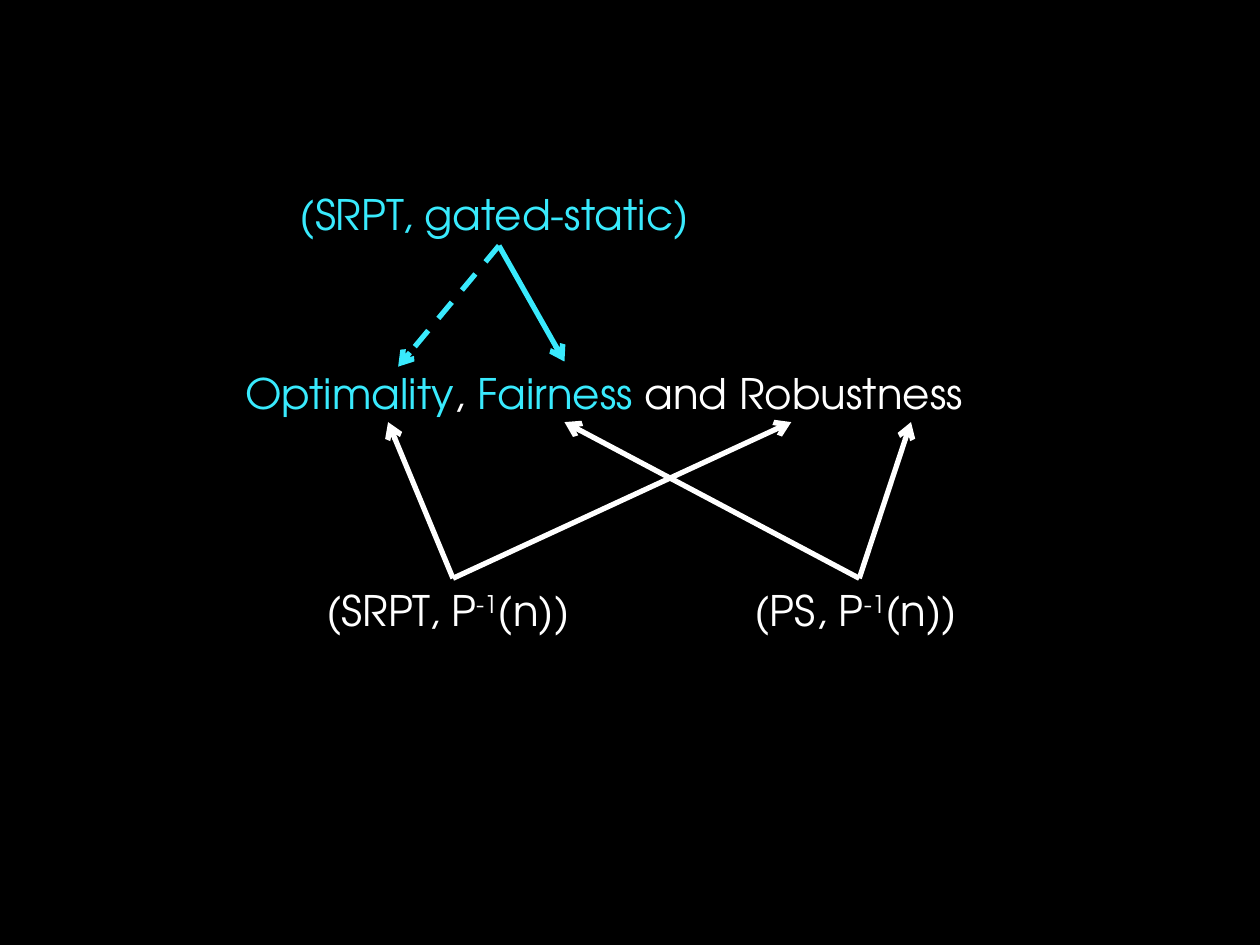
from lxml import etree
from pptx import Presentation
from pptx.dml.color import RGBColor
from pptx.enum import dml, shapes, text
from pptx.oxml.ns import qn
from pptx.util import Inches, Pt

BLACK = RGBColor(0x00, 0x00, 0x00)
WHITE = RGBColor(0xFF, 0xFF, 0xFF)
CYAN = RGBColor(0x39, 0xEA, 0xFD)
FONT = "TeX Gyre Adventor"
TOP, BOTTOM = 0, 2  # connection sites of a rectangle

# Content: runs are (text, colour, superscript)
GOALS = [("Optimality", CYAN, False), (", ", WHITE, False),
         ("Fairness", CYAN, False), (" and Robustness", WHITE, False)]
GOALS_BOX = (1.85, 2.87, 7.65, 3.83)


def inverse_power(scheduler):
    return [(f"({scheduler}, P", WHITE, False), ("-1", WHITE, True),
            ("(n))", WHITE, False)]


# Policies: runs, box, side the arrows leave from, colour, arrow tips (x, y, dashed)
POLICIES = [
    (inverse_power("SRPT"), (2.49, 4.59, 2.21, 0.5), TOP, WHITE,
     [(3.08, 3.35, False), (6.28, 3.35, False)]),
    (inverse_power("PS"), (5.89, 4.59, 1.86, 0.5), TOP, WHITE,
     [(7.23, 3.35, False), (4.48, 3.35, False)]),
    ([("(SRPT, gated-static)", CYAN, False)], (2.28, 1.45, 3.36, 0.5), BOTTOM, CYAN,
     [(4.48, 2.87, False), (3.16, 2.91, True)]),
]


def add_label(slide, runs, box, wrap=False):
    label = slide.shapes.add_textbox(*map(Inches, box))
    frame = label.text_frame
    frame.word_wrap = wrap
    if not wrap:
        frame.auto_size = text.MSO_AUTO_SIZE.SHAPE_TO_FIT_TEXT
    for words, colour, superscript in runs:
        run = frame.paragraphs[0].add_run()
        run.text = words
        run.font.name, run.font.size = FONT, Pt(24)
        run.font.color.rgb = colour
        if superscript:
            run.font._element.set("baseline", "30000")
    return label


def add_arrow(slide, policy, side, tip, colour, dashed):
    x, y = map(Inches, tip)
    arrow = slide.shapes.add_connector(shapes.MSO_CONNECTOR.STRAIGHT, x, y, x, y)
    arrow.begin_connect(policy, side)
    arrow.line.color.rgb = colour
    arrow.line.width = Pt(3)
    if dashed:
        arrow.line.dash_style = dml.MSO_LINE.DASH
    etree.SubElement(arrow.line._get_or_add_ln(), qn("a:tailEnd"), type="arrow")
    etree.SubElement(arrow._element.spPr, qn("a:effectLst"))


def main():
    deck = Presentation()
    deck.slide_width, deck.slide_height = Inches(10), Inches(7.5)
    slide = deck.slides.add_slide(deck.slide_layouts[6])
    slide.background.fill.solid()
    slide.background.fill.fore_color.rgb = BLACK

    # Goals in the middle row
    add_label(slide, GOALS, GOALS_BOX, wrap=True)

    # Policies, each pointing at the goals it meets
    for runs, box, side, colour, tips in POLICIES:
        policy = add_label(slide, runs, box)
        for x, y, dashed in tips:
            add_arrow(slide, policy, side, (x, y), colour, dashed)

    deck.save("out.pptx")


if __name__ == "__main__":
    main()
